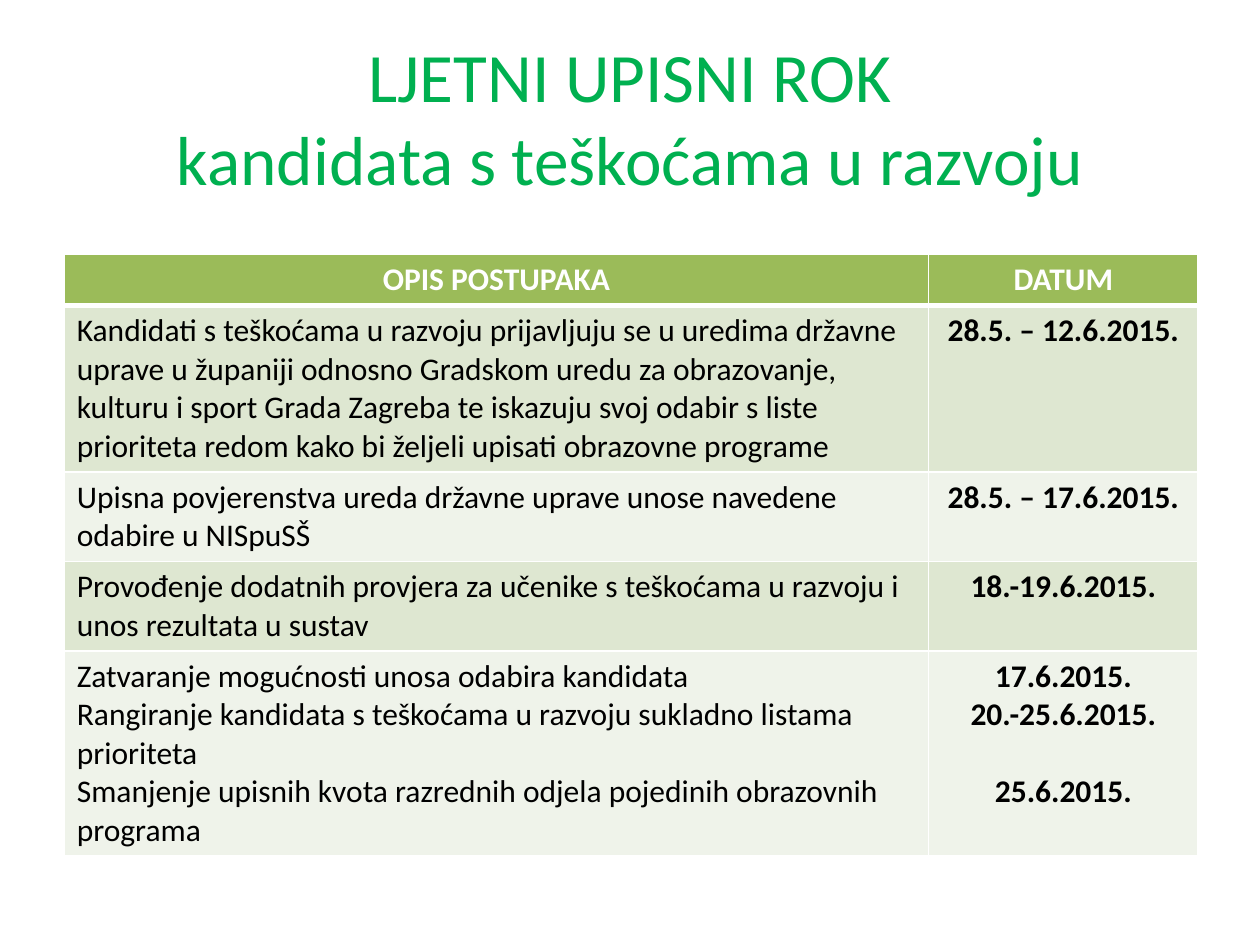
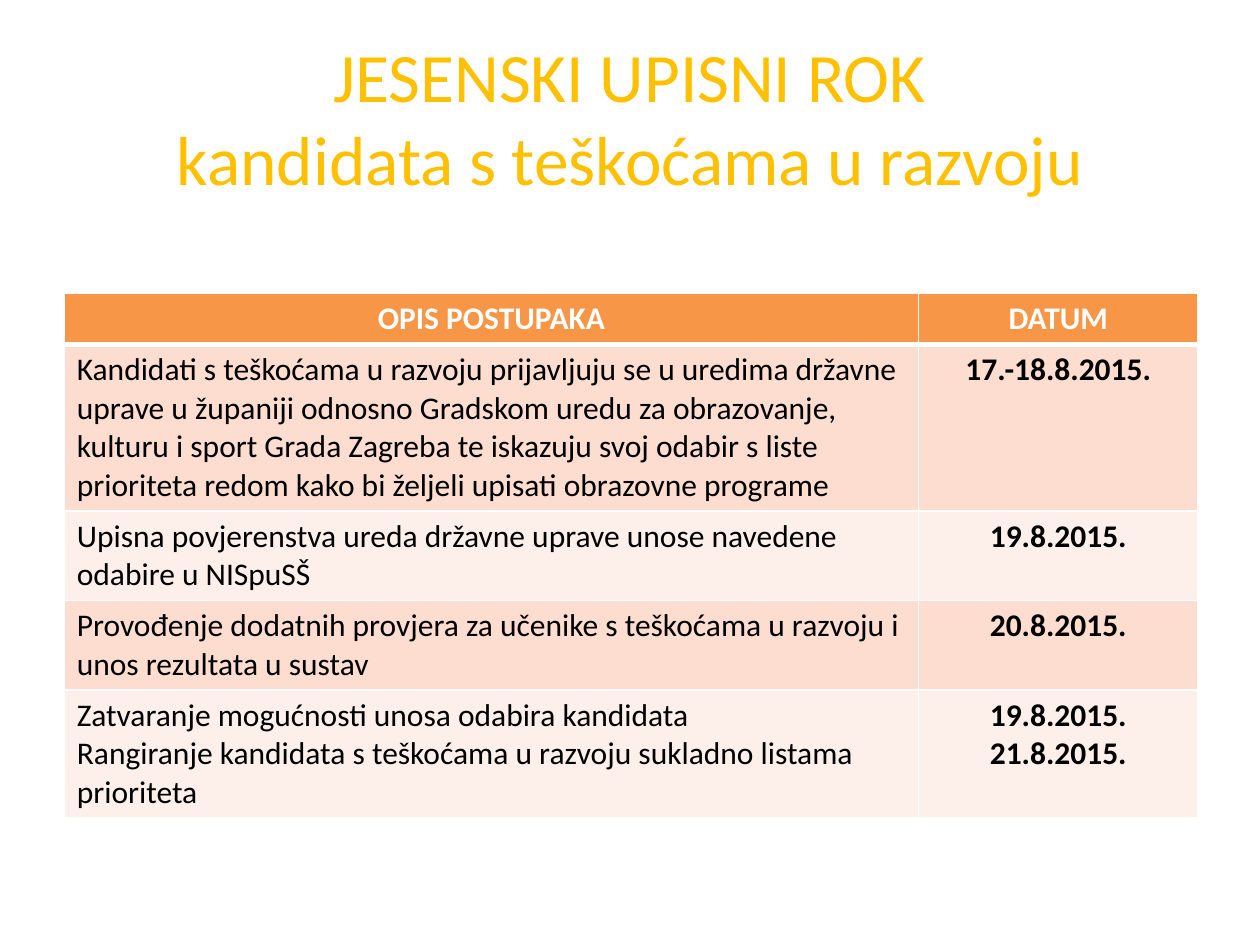
from lxml import etree
from pptx import Presentation
from pptx.dml.color import RGBColor
from pptx.enum.text import MSO_ANCHOR, MSO_AUTO_SIZE, PP_ALIGN
from pptx.oxml.ns import qn
from pptx.util import Inches, Pt

LEFT, CENTER = PP_ALIGN.LEFT, PP_ALIGN.CENTER
MIDDLE, NO_FIT = MSO_ANCHOR.MIDDLE, MSO_AUTO_SIZE.NONE
FONT = "Calibri"
TITLE_ONLY = 5

WHITE = RGBColor(0xFF, 0xFF, 0xFF)
BLACK = RGBColor(0, 0, 0)
GREEN = RGBColor(0x00, 0xB0, 0x50)
AMBER = RGBColor(0xFF, 0xC0, 0x00)
# Header fill, then the two alternating row fills
GREEN_BANDS = (RGBColor(0x9B, 0xBB, 0x59), RGBColor(0xDE, 0xE7, 0xD1),
               RGBColor(0xEF, 0xF3, 0xEA))
ORANGE_BANDS = (RGBColor(0xF7, 0x96, 0x46), RGBColor(0xFC, 0xDD, 0xCF),
                RGBColor(0xFD, 0xEF, 0xE9))

TITLE_SIZE, CELL_SIZE = 39.6, 18
LINE_PT = 22                     # height of one text line in a cell
LINE_IN, CELL_PAD = 0.305, 0.1
TABLE_LEFT, TABLE_WIDTH = 0.51, 9

# Text shared by both enrolment periods
SUBTITLE = "kandidata s teškoćama u razvoju"
HEADER = ("OPIS POSTUPAKA", "DATUM")
APPLY = ("Kandidati s teškoćama u razvoju prijavljuju se u uredima državne "
         "uprave u županiji odnosno Gradskom uredu za obrazovanje, kulturu i "
         "sport Grada Zagreba te iskazuju svoj odabir s liste prioriteta redom "
         "kako bi željeli upisati obrazovne programe")
ENTER = ("Upisna povjerenstva ureda državne uprave unose navedene odabire "
         "u NISpuSŠ")
CHECK = ("Provođenje dodatnih provjera za učenike s teškoćama u razvoju i "
         "unos rezultata u sustav")
CLOSE = "Zatvaranje mogućnosti unosa odabira kandidata"
RANK = ("Rangiranje kandidata s teškoćama u razvoju sukladno listama "
        "prioriteta")
REDUCE = ("Smanjenje upisnih kvota razrednih odjela pojedinih obrazovnih "
          "programa")


def format_font(font, size, color, bold=False):
    values = {"name": FONT, "size": Pt(size), "bold": bold}
    for name, value in values.items():
        setattr(font, name, value)
    font.color.rgb = color


def add_title(s, heading, color):
    title = s.shapes.title
    box = {"left": 0.5, "top": 0.3, "width": 9, "height": 1.25}
    for name, value in box.items():
        setattr(title, name, Inches(value))
    tf = title.text_frame
    tf.auto_size, tf.vertical_anchor = NO_FIT, MIDDLE
    p = tf.paragraphs[0]
    p.text = f"{heading}\v{SUBTITLE}"
    p.alignment = CENTER
    for r in p.runs:
        format_font(r.font, TITLE_SIZE, color)


def set_borders(cell, top=1, bottom=1):
    tc_pr = cell._tc.get_or_add_tcPr()
    for side, width in (("L", 1), ("R", 1), ("T", top), ("B", bottom)):
        ln = etree.SubElement(tc_pr, qn(f"a:ln{side}"), w=str(Pt(width)))
        fill = etree.SubElement(ln, qn("a:solidFill"))
        etree.SubElement(fill, qn("a:srgbClr"), val=str(WHITE))


def fill_cell(cell, lines, align, color, bold):
    tf = cell.text_frame
    for i, line in enumerate(lines):
        p = tf.paragraphs[0] if i == 0 else tf.add_paragraph()
        p.alignment = align
        r = p.add_run()
        r.text = line
        format_font(r.font, CELL_SIZE, color, bold)


def add_schedule(s, top, date_width, bands, rows):
    """Each row holds its line count, its steps and its dates."""
    rows = [(1, HEADER[:1], HEADER[1:])] + rows
    heights = [Inches(CELL_PAD + LINE_IN * row[0]) for row in rows]
    table = s.shapes.add_table(len(rows), 2, Inches(TABLE_LEFT), Inches(top),
                               Inches(TABLE_WIDTH), sum(heights)).table
    table.columns[0].width = Inches(TABLE_WIDTH - date_width)
    table.columns[1].width = Inches(date_width)
    for i, (_, *texts) in enumerate(rows):
        table.rows[i].height = heights[i]
        is_header = i == 0
        band = bands[0] if is_header else bands[2 - i % 2]
        for j, lines in enumerate(texts):
            cell = table.cell(i, j)
            set_borders(cell, top=3 if i == 1 else 1,
                        bottom=3 if is_header else 1)
            cell.fill.solid()
            cell.fill.fore_color.rgb = band
            centered = is_header or j == 1
            fill_cell(cell, lines, CENTER if centered else LEFT,
                      WHITE if is_header else BLACK, bold=centered)
    return table


def add_period(prs, heading, color, *schedule):
    s = prs.slides.add_slide(prs.slide_layouts[TITLE_ONLY])
    add_title(s, heading, color)
    return add_schedule(s, *schedule)


def main():
    prs = Presentation()
    prs.slide_width, prs.slide_height = Inches(10), Inches(7.5)

    # Summer period
    table = add_period(prs, "LJETNI UPISNI ROK", GREEN, 2.02, 2.14, GREEN_BANDS, [
        (4, [APPLY], ["28.5. – 12.6.2015."]),
        (2, [ENTER], ["28.5. – 17.6.2015."]),
        (2, [CHECK], ["18.-19.6.2015."]),
        (5, [CLOSE, RANK, REDUCE],
         ["17.6.2015.", "20.-25.6.2015.", "25.6.2015."]),
    ])
    # The last date lines up with its step, below a two-line step
    last_date = table.cell(4, 1).text_frame.paragraphs[-1]
    last_date.space_before = Pt(LINE_PT)

    # Autumn period
    add_period(prs, "JESENSKI UPISNI ROK", AMBER, 2.33, 2.22, ORANGE_BANDS, [
        (4, [APPLY], ["17.-18.8.2015."]),
        (2, [ENTER], ["19.8.2015."]),
        (2, [CHECK], ["20.8.2015."]),
        (3, [CLOSE, RANK], ["19.8.2015.", "21.8.2015."]),
    ])
    prs.save("out.pptx")


if __name__ == "__main__":
    main()
